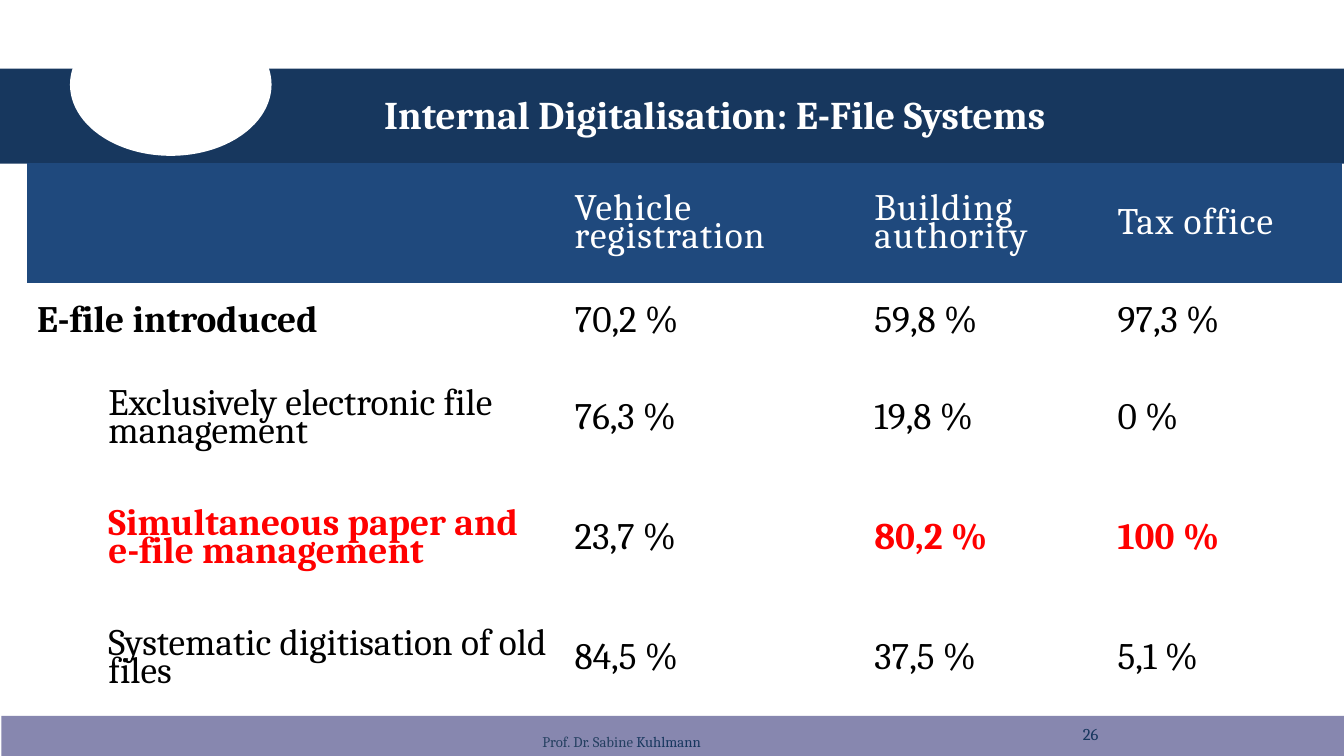
from pptx import Presentation
from pptx.dml.color import RGBColor
from pptx.enum.shapes import MSO_SHAPE
from pptx.enum.text import MSO_ANCHOR
from pptx.util import Pt

RECTANGLE, OVAL = MSO_SHAPE.RECTANGLE, MSO_SHAPE.OVAL
TOP, MIDDLE = MSO_ANCHOR.TOP, MSO_ANCHOR.MIDDLE
NO_GRID_STYLE = "{2D5ABB26-0587-4C30-8999-92F81FD0307C}"
COLORS = {"white": "FFFFFF", "black": "000000", "red": "FF0000", "navy": "17375E",
          "header": "1F497D", "footer": "8787AF", "author": "254061"}

COLUMN_WIDTHS = [38.2, 249.8, 160.6, 130.3, 126]
ROW_HEIGHTS = [64.3, 40.2, 64.3, 64.3, 64.3]
HEADINGS = ["Vehicle registration", "Building authority", "Tax office"]
ROWS = [
    ["E-file introduced", "70,2 %", "59,8 %", "97,3 %"],
    ["Exclusively electronic file management", "76,3 %", "19,8 %", "0 %"],
    ["Simultaneous paper and e-file management", "23,7 %", "80,2 %", "100 %"],
    ["Systematic digitisation of old files", "84,5 %", "37,5 %", "5,1 %"],
]
HIGHLIGHTS = {ROWS[2][0], "80,2 %", "100 %"}


class SlideBuilder:
    font_name = "Cambria"

    def __init__(self, page):
        self.page = page

    def color(self, name):
        return RGBColor.from_string(COLORS[name])

    def shape(self, kind, left, top, width, height, fill):
        shape = self.page.shapes.add_shape(kind, Pt(left), Pt(top), Pt(width), Pt(height))
        shape.shadow.inherit = False
        shape.fill.solid()
        shape.fill.fore_color.rgb = self.color(fill)
        shape.line.fill.background()

    def span(self, para, text, size, color, bold=False):
        span = para.add_run()
        span.text = text
        style = {"name": self.font_name, "size": Pt(size), "bold": bold}
        for key, value in style.items():
            setattr(span.font, key, value)
        span.font.color.rgb = self.color(color)
        return span

    def text(self, left, top, width, height, spans, anchor=MIDDLE):
        box = self.page.shapes.add_textbox(Pt(left), Pt(top), Pt(width), Pt(height))
        box.text_frame.word_wrap = True
        box.text_frame.vertical_anchor = anchor
        for values in spans:
            self.span(box.text_frame.paragraphs[0], *values)

    def cell(self, cell, text, color, bold=False, spacing=0):
        layout = {"vertical_anchor": MIDDLE, "margin_left": Pt(5.7), "margin_right": Pt(5.7),
                  "margin_top": Pt(7.2), "margin_bottom": 0}
        for key, value in layout.items():
            setattr(cell, key, value)
        para = cell.text_frame.paragraphs[0]
        para.line_spacing = Pt(15)
        span = self.span(para, text, 20, color, bold)
        # Letter spacing in hundredths of a point
        span.font._element.set("spc", str(spacing))

    def table(self, left, top):
        frame = self.page.shapes.add_table(
            len(ROW_HEIGHTS), len(COLUMN_WIDTHS), Pt(left), Pt(top),
            Pt(sum(COLUMN_WIDTHS)), Pt(sum(ROW_HEIGHTS)))
        table = frame.table
        table.first_row = table.horz_banding = False
        table._tbl.tblPr.find("{*}tableStyleId").text = NO_GRID_STYLE
        for column, width in zip(table.columns, COLUMN_WIDTHS):
            column.width = Pt(width)
        for row, height in zip(table.rows, ROW_HEIGHTS):
            row.height = Pt(height)
        for cell in table.iter_cells():
            cell.fill.background()
        for row in (0, 1):
            table.cell(row, 0).merge(table.cell(row, 1))

        # Heading row
        for cell in table.rows[0].cells:
            cell.fill.solid()
            cell.fill.fore_color.rgb = self.color("header")
        for column, heading in enumerate(HEADINGS, 2):
            self.cell(table.cell(0, column), heading, "white", spacing=60)

        # Body rows: the first label spans the indent column
        for row, texts in enumerate(ROWS, 1):
            for column, text in enumerate(texts, 1):
                marked = text in HIGHLIGHTS
                main_label = row == 1 and column == 1
                cell = table.cell(row, 0 if main_label else column)
                self.cell(cell, text, "red" if marked else "black", marked or main_label)


def main():
    deck = Presentation()
    deck.slide_width, deck.slide_height = Pt(720), Pt(405)
    builder = SlideBuilder(deck.slides.add_slide(deck.slide_layouts[6]))

    # Title band and footer band
    builder.shape(RECTANGLE, 0, 36.7, 720, 51, "navy")
    builder.shape(OVAL, 37.5, 7.2, 108, 76.3, "white")
    builder.shape(RECTANGLE, 0.7, 383.5, 719.3, 21.5, "footer")
    builder.text(198.7, 47.5, 498, 27,
                 [("Internal Digitalisation: E-File Systems", 21, "white", True)])

    # Page number, table and author
    builder.text(573, 385.2, 57.6, 16, [("26", 8.9, "navy")])
    builder.table(14.2, 87.6)
    builder.text(283.4, 389, 171.4, 16,
                 [("Prof. Dr. Sabine ", 7.9, "author"), ("Kuhlmann", 7.9, "navy")], TOP)

    deck.save("out.pptx")


if __name__ == "__main__":
    main()
